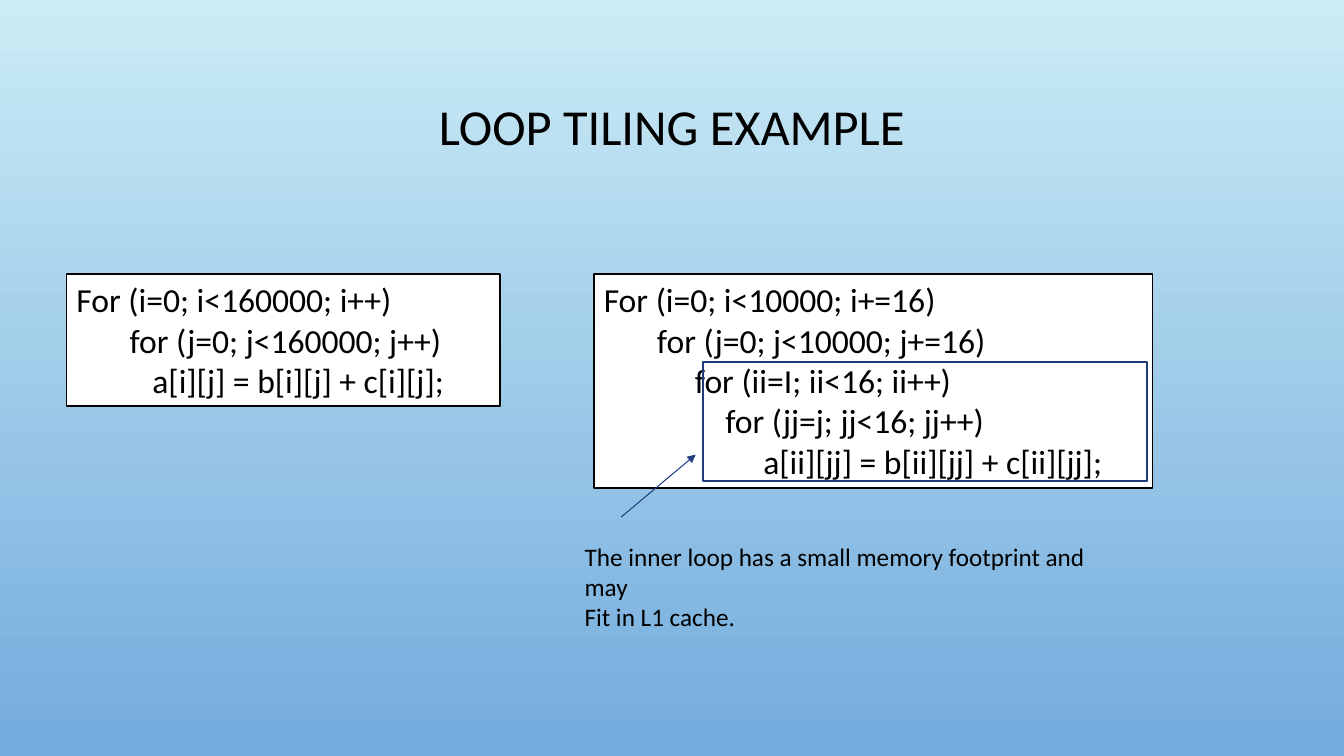
from dataclasses import dataclass
from lxml.etree import SubElement
from pptx import Presentation
from pptx.dml.color import RGBColor as RGB
from pptx.enum.shapes import MSO_CONNECTOR as LINK, MSO_SHAPE as SHAPE
from pptx.enum.text import MSO_ANCHOR as ANCHOR, PP_ALIGN as ALIGN
from pptx.oxml.ns import qn
from pptx.util import Inches, Pt


@dataclass
class Theme:
    font: str = "Calibri"
    sky: RGB = RGB.from_string("CBECF5")
    sea: RGB = RGB.from_string("73ABDD")
    black: RGB = RGB.from_string("000000")
    white: RGB = RGB.from_string("FFFFFF")
    frame: RGB = RGB.from_string("1D3A79")
    arrow: RGB = RGB.from_string("1F3F83")
    title: int = 36
    code: int = 24
    note: int = 18


theme = Theme()


def write(shape, text, size, align=ALIGN.LEFT, anchor=ANCHOR.TOP):
    frame = shape.text_frame
    frame.word_wrap = True
    frame.vertical_anchor = anchor
    frame.text = text
    for para in frame.paragraphs:
        para.alignment = align
        for run in para.runs:
            run.font.name = theme.font
            run.font.size = Pt(size)
            run.font.color.rgb = theme.black


def add_box(left, top, width, height, color):
    box = slide.shapes.add_shape(
        SHAPE.RECTANGLE, Inches(left), Inches(top), Inches(width), Inches(height))
    box.shadow.inherit = False
    box.line.color.rgb = color
    box.line.width = Pt(1.25)
    return box


deck = Presentation()
deck.slide_width, deck.slide_height = Inches(13.33), Inches(7.5)
slide = deck.slides.add_slide(deck.slide_layouts[6])

# Background, light at the top
fill = slide.background.fill
fill.gradient()
fill.gradient_angle = 270
for stop, color, place in zip(fill.gradient_stops, (theme.sky, theme.sea), (0, 1)):
    stop.color.rgb = color
    stop.position = place

# Title
title = slide.shapes.add_textbox(Inches(1), Inches(0.68), Inches(11.33), Inches(1.21))
write(title, "LOOP TILING EXAMPLE", theme.title, ALIGN.CENTER, ANCHOR.MIDDLE)
title.text_frame.paragraphs[0].line_spacing = 0.9

# Plain loop and tiled loop
plain = """For (i=0; i<160000; i++)
       for (j=0; j<160000; j++)
          a[i][j] = b[i][j] + c[i][j];"""
tiled = """For (i=0; i<10000; i+=16)
       for (j=0; j<10000; j+=16)
            for (ii=I; ii<16; ii++)
                for (jj=j; jj<16; jj++)
                     a[ii][jj] = b[ii][jj] + c[ii][jj];"""
for code, left, width, height in ((plain, 0.66, 4.3, 1.31), (tiled, 5.89, 5.54, 2.12)):
    box = add_box(left, 2.72, width, height, theme.black)
    box.fill.solid()
    box.fill.fore_color.rgb = theme.white
    write(box, code, theme.code)

# Frame around the inner loops
add_box(6.97, 3.59, 4.41, 1.18, theme.frame).fill.background()

# Arrow from the note to the frame
arrow = slide.shapes.add_connector(
    LINK.STRAIGHT, Inches(6.16), Inches(5.13), Inches(6.9), Inches(4.51))
arrow.line.color.rgb = theme.arrow
arrow.line.width = Pt(0.75)
SubElement(arrow.line._get_or_add_ln(), qn("a:tailEnd"), type="triangle")
SubElement(arrow._element.spPr, qn("a:effectLst"))

# Note
note = slide.shapes.add_textbox(Inches(5.7), Inches(5.32), Inches(5.56), Inches(0.71))
write(note, "The inner loop has a small memory footprint and may\nFit in L1 cache.", theme.note)

deck.save("out.pptx")
